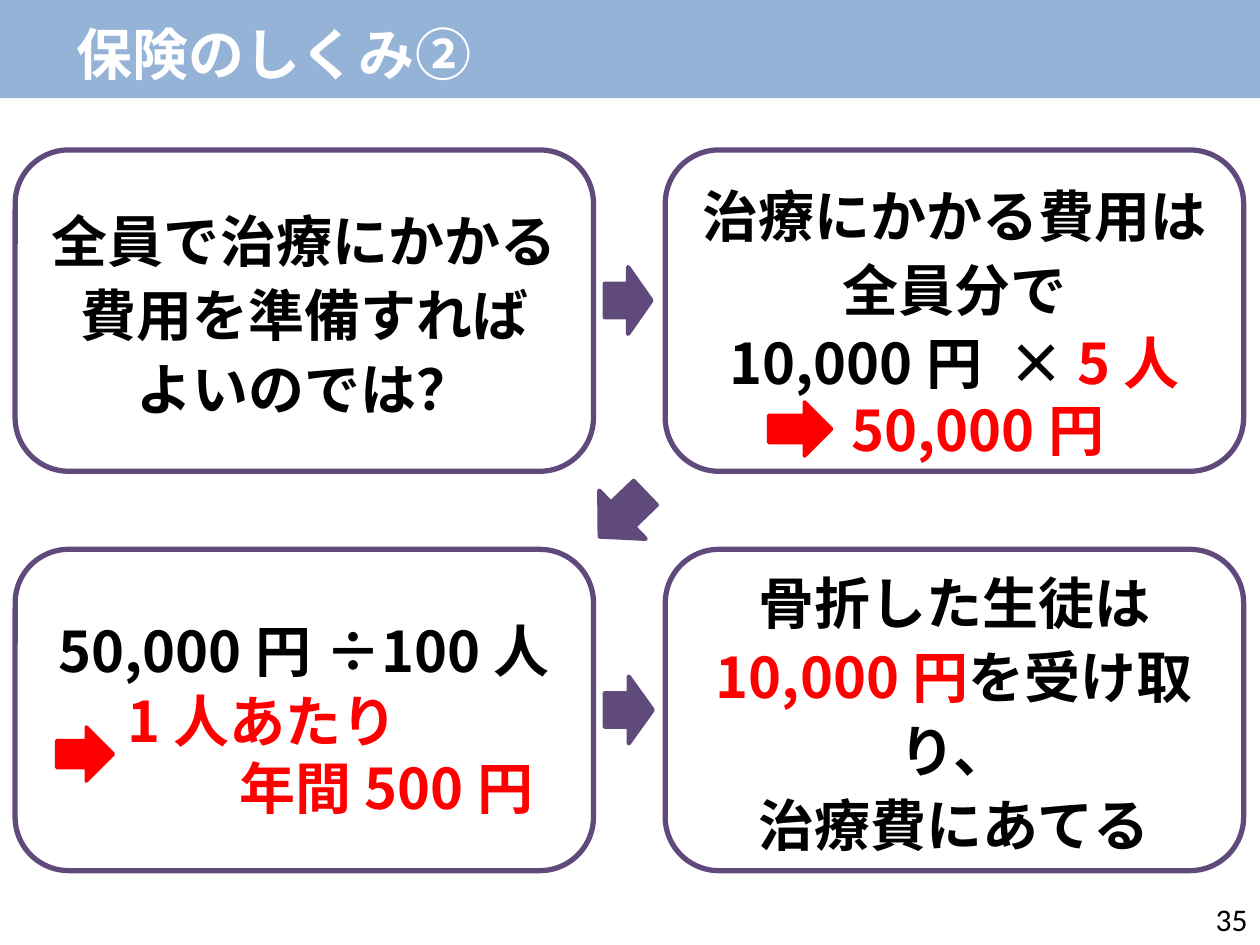
from lxml.etree import SubElement
from pptx import Presentation
from pptx.dml.color import RGBColor
from pptx.enum.shapes import MSO_SHAPE as SHAPE
from pptx.enum.text import MSO_ANCHOR as ANCHOR, MSO_AUTO_SIZE as AUTO, PP_ALIGN as ALIGN
from pptx.oxml.ns import qn
from pptx.util import Inches, Pt

THEME = {
    "banner": "95B3D7", "white": "FFFFFF", "purple": "604A7B",
    "black": "000000", "red": "FF0000",
    "font": "Noto Sans CJK JP", "number_font": "Calibri",
    "body": 32, "number": 18,
}

# Content: a line is a list of (text, colour) runs
TITLE = "保険のしくみ②"
PAGE = "35"
# column, row, line spacing, room kept free at the bottom, lines
STEPS = [
    (0, 0, 1.1, 0, [[("全員で治療にかかる", "black")],
                    [("費用を準備すれば", "black")],
                    [("よいのでは？", "black")]]),
    (1, 0, 1.1, 0.4, [[("治療にかかる費用は", "black")],
                      [("全員分で", "black")],
                      [("10,000円 × ", "black"), ("5人", "red")]]),
    (0, 1, 1.0, 0.95, [[("50,000円÷100人", "black")]]),
    (1, 1, 1.1, 0, [[("骨折した生徒は", "black")],
                    [("10,000円", "red"), ("を受け取り、", "black")],
                    [("治療費にあてる", "black")]]),
]
# left, top, width, height, rotation, colour, line width
ARROWS = [
    (4.8, 2.12, 0.37, 0.53, 0, "purple", 2.5),
    (4.8, 5.37, 0.38, 0.53, 0, "purple", 2.5),
    (4.69, 3.82, 0.5, 0.53, 136.1, "purple", 2.5),
    (6.1, 3.19, 0.5, 0.43, 0, "red", 2),
    (0.45, 5.77, 0.45, 0.43, 0, "red", 2),
]

# Grid of the four steps
LEFT, TOP = 0.12, 1.19
STEP_W, STEP_H = 4.59, 2.55
COL_PITCH, ROW_PITCH = 5.16, 3.17
INDENT = 0.89  # two full-width characters

prs = Presentation()
prs.slide_width, prs.slide_height = Inches(10), Inches(7.5)
slide = prs.slides.add_slide(prs.slide_layouts[6])


def color(name):
    return RGBColor.from_string(THEME[name])


def add_shape(kind, box, fill, line=None, width=0):
    sp = slide.shapes.add_shape(kind, *map(Inches, box))
    sp.shadow.inherit = False
    sp.fill.solid()
    sp.fill.fore_color.rgb = color(fill)
    if line:
        sp.line.color.rgb = color(line)
        sp.line.width = Pt(width)
    else:
        sp.line.fill.background()
    return sp


def write(sp, lines, align, spacing=None, font="font", size="body", bold=True):
    tf = sp.text_frame
    for i, runs in enumerate(lines):
        p = tf.paragraphs[0] if i == 0 else tf.add_paragraph()
        p.alignment = align
        if spacing:
            p.line_spacing = spacing
        base = runs[0][1]
        p.font.size, p.font.bold = Pt(THEME[size]), bold
        p.font.name = THEME[font]
        p.font.color.rgb = color(base)
        SubElement(p._p.pPr.find(qn("a:defRPr")), qn("a:ea"), typeface=THEME[font])
        for text, name in runs:
            r = p.add_run()
            r.text = text
            if name != base:
                r.font.color.rgb = color(name)
    return tf


def add_text(box, lines, align=ALIGN.LEFT, anchor=ANCHOR.TOP, wrap=True, **style):
    sp = slide.shapes.add_textbox(*map(Inches, box))
    tf = write(sp, lines, align, **style)
    tf.word_wrap, tf.vertical_anchor = wrap, anchor
    return tf


# Title banner
add_shape(SHAPE.RECTANGLE, (0, 0, 10, 0.78), "banner")
add_text((0.51, 0.03, 4.29, 0.79), [[(TITLE, "white")]], anchor=ANCHOR.MIDDLE)

# Steps
for col, row, spacing, room, lines in STEPS:
    box = (LEFT + col * COL_PITCH, TOP + row * ROW_PITCH, STEP_W, STEP_H)
    sp = add_shape(SHAPE.ROUNDED_RECTANGLE, box, "white", "purple", 3)
    tf = write(sp, lines, ALIGN.CENTER, spacing)
    tf.word_wrap, tf.vertical_anchor = True, ANCHOR.MIDDLE
    tf.margin_bottom = Inches(0.05 + room)

# Arrows between steps and before results
for *box, rotation, name, width in ARROWS:
    add_shape(SHAPE.RIGHT_ARROW, box, name, name, width).rotation = rotation

# Results
tf = add_text((6.6, 3.09, 2.32, 0.64), [[("50,000円", "red")]], ALIGN.CENTER, wrap=False)
tf.auto_size = AUTO.SHAPE_TO_FIT_TEXT
tf = add_text((0.91, 5.4, 3.51, 1.18), [[("1人あたり", "red")], [("年間500円", "red")]])
tf.auto_size = AUTO.SHAPE_TO_FIT_TEXT
tf.paragraphs[1]._p.pPr.set("marL", str(Inches(INDENT)))

# Page number
add_text((7.75, 7.09, 2.25, 0.4), [[(PAGE, "black")]], ALIGN.RIGHT, ANCHOR.MIDDLE,
         font="number_font", size="number", bold=False)

prs.save("out.pptx")
